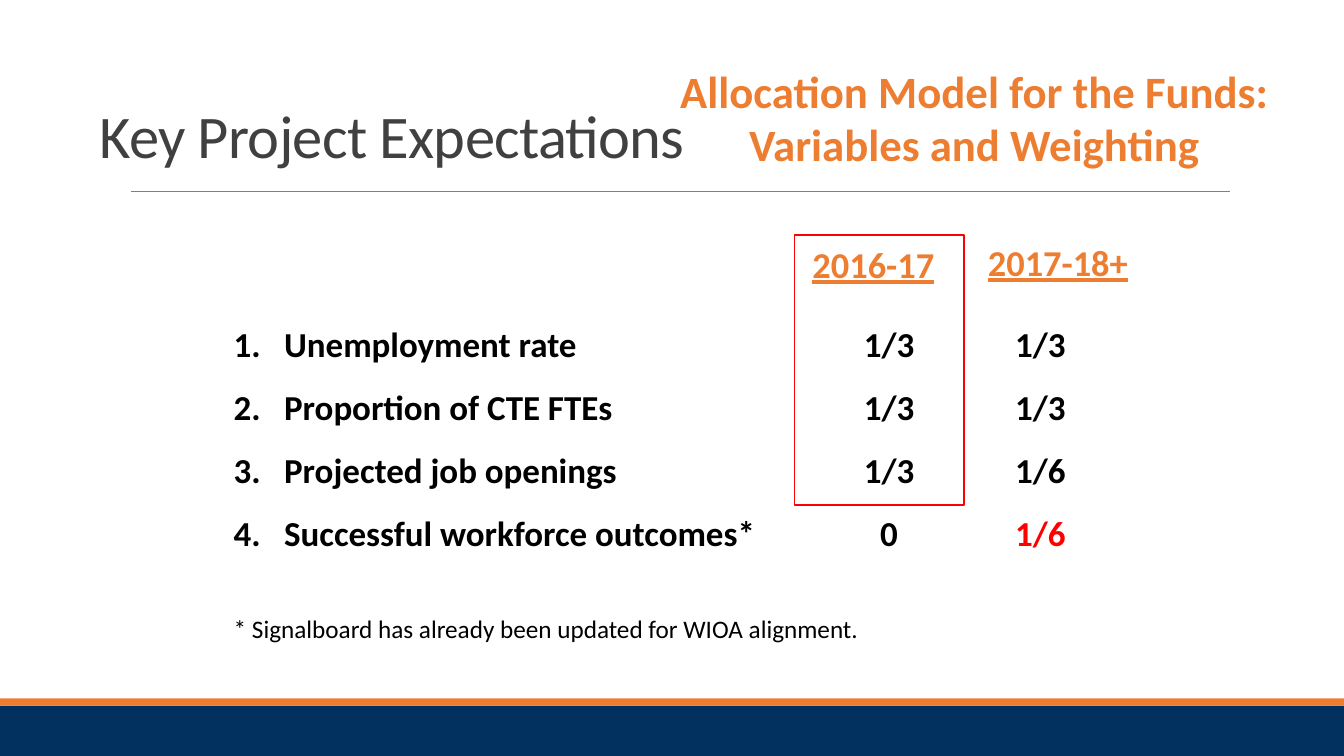
from lxml.etree import SubElement
from pptx import Presentation
from pptx.dml.color import RGBColor
from pptx.enum.shapes import MSO_CONNECTOR as CONNECTOR, MSO_SHAPE as SHAPE
from pptx.enum.text import MSO_ANCHOR as ANCHOR, PP_ALIGN as ALIGN
from pptx.oxml.ns import qn
from pptx.util import Inches, Pt

NAVY = RGBColor(0x02, 0x31, 0x60)
ORANGE = RGBColor(0xED, 0x7D, 0x31)
GRAY = RGBColor(0x80, 0x80, 0x80)
CHARCOAL = RGBColor(0x40, 0x40, 0x40)
RED = RGBColor(0xFF, 0x00, 0x00)
BLACK = RGBColor(0x00, 0x00, 0x00)

PAGE_WIDTH, PAGE_HEIGHT = 13.33, 7.5
VARIABLES = [
    ("Unemployment rate", "1/3", "1/3"),
    ("Proportion of CTE FTEs", "1/3", "1/3"),
    ("Projected job openings", "1/3", "1/6"),
    ("Successful workforce outcomes*", "0", "1/6"),
]
FOOTNOTE = "* Signalboard has already been updated for WIOA alignment."
INDENT = 0.5
WEIGHT_TABS = (6.5, 8)


def add_rectangle(page, left, top, width, height, fill=None, line=None):
    box = page.shapes.add_shape(SHAPE.RECTANGLE, Inches(left), Inches(top),
                                Inches(width), Inches(height))
    box.shadow.inherit = False
    if fill is None:
        box.fill.background()
    else:
        box.fill.solid()
        box.fill.fore_color.rgb = fill
    if line is None:
        box.line.fill.background()
    else:
        box.line.color.rgb = line
        box.line.width = Pt(1.25)
    return box


def add_text(page, left, top, width, height, text="", wrap=True):
    box = page.shapes.add_textbox(Inches(left), Inches(top), Inches(width), Inches(height))
    frame = box.text_frame
    frame.word_wrap = wrap
    frame.text = text
    return frame


def style(para, size, color, bold=False, underline=False):
    for span in para.runs:
        font = span.font
        font.name = "Calibri"
        font.size = Pt(size)
        font.color.rgb = color
        font.bold = bold
        font.underline = underline


def number_and_tab(para):
    """Give a paragraph a hanging number and centred tabs for the weights."""
    props = para._p.get_or_add_pPr()
    props.set("marL", str(Inches(INDENT)))
    props.set("indent", str(-Inches(INDENT)))
    SubElement(props, qn("a:buFont"), typeface="+mj-lt")
    SubElement(props, qn("a:buAutoNum"), type="arabicPeriod")
    tabs = SubElement(props, qn("a:tabLst"))
    for position in WEIGHT_TABS:
        SubElement(tabs, qn("a:tab"), pos=str(Inches(position)), algn="ctr")


def add_footer(page, height=0.5, stripe=0.07):
    top = PAGE_HEIGHT - height
    add_rectangle(page, 0, top, PAGE_WIDTH, height, NAVY)
    add_rectangle(page, 0, top - stripe, PAGE_WIDTH, stripe, ORANGE)


def add_header(page, left, top, width, height):
    rule_top = Inches(top + height + 0.16)
    rule = page.shapes.add_connector(CONNECTOR.STRAIGHT, Inches(left + 0.41), rule_top,
                                     Inches(left + width - 0.25), rule_top)
    rule.line.color.rgb = GRAY
    rule.line.width = Pt(0.5)
    SubElement(rule._element.spPr, qn("a:effectLst"))

    title = add_text(page, left, top, width, height, "Key Project Expectations")
    title.vertical_anchor = ANCHOR.BOTTOM
    para = title.paragraphs[0]
    para.line_spacing = 0.85
    style(para, 43.2, CHARCOAL)
    para.runs[0]._r.get_or_add_rPr().set("spc", "-50")

    subtitle = add_text(page, left + 5.3, top - 0.1, 7.15, 1.25,
                        "Allocation Model for the Funds:\nVariables and Weighting")
    for para in subtitle.paragraphs:
        para.alignment = ALIGN.CENTER
        style(para, 32, ORANGE, bold=True)
    subtitle.paragraphs[0]._p.get_or_add_pPr().set("marR", str(Inches(0.2)))


def add_weights(page, left, top, width, height):
    frame = add_text(page, left, top, width, height)
    frame.text = "\n".join("\t".join(row) for row in VARIABLES)
    for para in frame.paragraphs:
        para.line_spacing = 1.5
        number_and_tab(para)

    last = frame.paragraphs[-1]
    label, first_weight, second_weight = VARIABLES[-1]
    last.text = f"{label}\t{first_weight}\t"
    last.add_run().text = second_weight
    for para in frame.paragraphs:
        style(para, 25, BLACK, bold=True)
    last.runs[-1].font.color.rgb = RED

    note = frame.add_paragraph()
    note.text = FOOTNOTE
    note.line_spacing = 1.5
    note.space_before = Pt(32)
    style(note, 18, BLACK)

    years = [("2016-17", 5.74, -0.59, 1.42), ("2017-18+", 7.48, -0.61, 1.6)]
    for year, across, down, year_width in years:
        heading = add_text(page, left + across, top + down, year_width, 0.54, year, wrap=False)
        style(heading.paragraphs[0], 26, ORANGE, bold=True, underline=True)
    add_rectangle(page, left + 5.66, top - 0.61, 1.68, 2.68, line=RED)


def main():
    deck = Presentation()
    deck.slide_width, deck.slide_height = Inches(PAGE_WIDTH), Inches(PAGE_HEIGHT)
    page = deck.slides.add_slide(deck.slide_layouts[6])
    add_footer(page)
    add_header(page, 0.89, 0.68, 11.56, 1.06)
    add_weights(page, 2.22, 2.94, 9.14, 3.89)
    deck.save("out.pptx")


if __name__ == "__main__":
    main()
